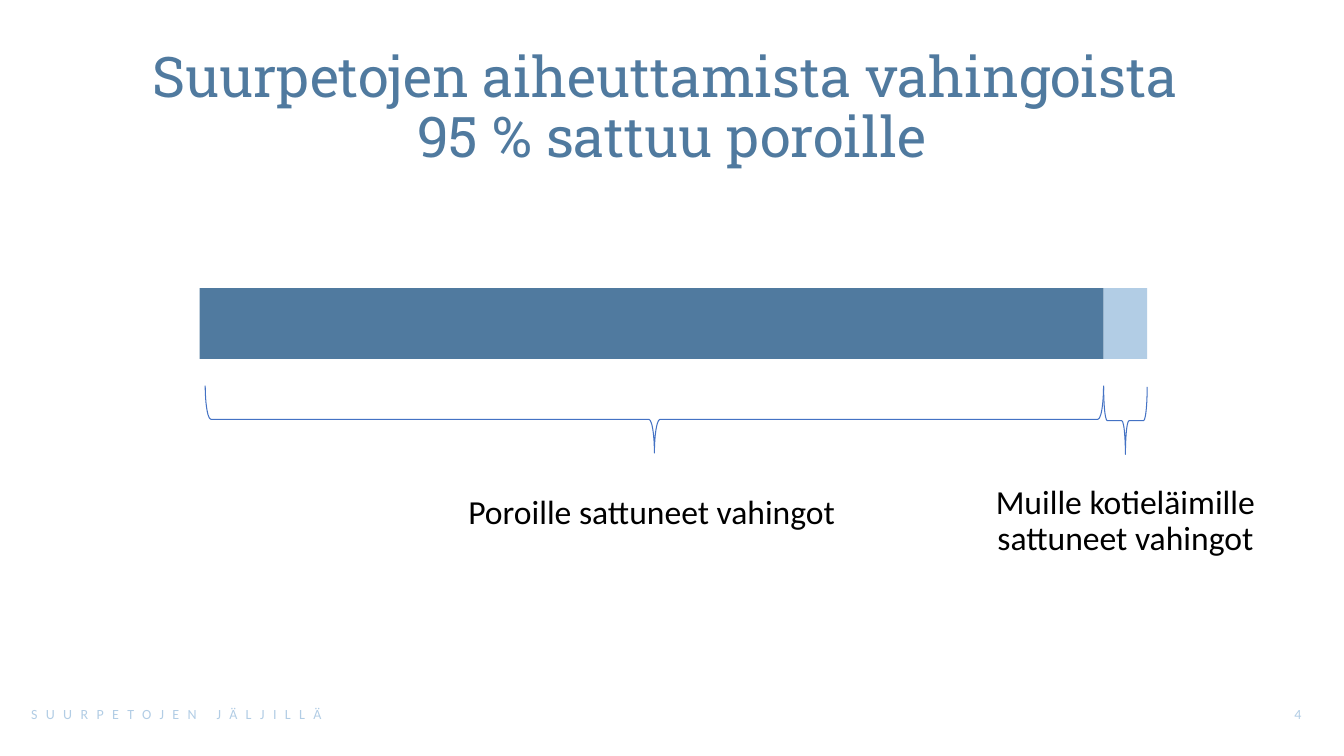
from pptx import Presentation
from pptx.util import Pt
from pptx.dml.color import RGBColor
from pptx.enum import shapes as sh, text as tx

HUES = {"dark": "507A9F", "pale": "B2CDE5", "brace": "4472C4", "ink": "000000"}
MID, LEFT, RIGHT = tx.PP_ALIGN.CENTER, tx.PP_ALIGN.LEFT, tx.PP_ALIGN.RIGHT


def hue(name):
    return RGBColor.from_string(HUES[name])


def place(item, box):
    item.left, item.top, item.width, item.height = map(Pt, box)


def write(frame, lines, size, color, align, font="Calibri"):
    frame.word_wrap = True
    frame.auto_size = tx.MSO_AUTO_SIZE.NONE
    para = frame.paragraphs[0]
    para.alignment = align
    for i, line in enumerate(lines):
        if i:
            para.add_line_break()
        run = para.add_run()
        run.text = line
        run.font.size, run.font.name = Pt(size), font
        run.font.bold = False
        run.font.color.rgb = hue(color)
    return para


def add_title(slide, box):
    title = slide.shapes.title
    place(title, box)
    frame = title.text_frame
    frame.vertical_anchor = tx.MSO_ANCHOR.MIDDLE
    lines = ["Suurpetojen aiheuttamista vahingoista ", "95 % sattuu poroille"]
    write(frame, lines, 40, "dark", MID, "Roboto Slab").line_spacing = 0.9


def add_label(slide, box, words):
    frame = slide.shapes.add_textbox(*map(Pt, box)).text_frame
    frame.vertical_anchor = tx.MSO_ANCHOR.MIDDLE
    frame.margin_left = frame.margin_right = Pt(9)
    para = write(frame, [words], 24, "ink", MID)
    para.line_spacing, para.space_before = 0.9, Pt(10)


def add_brace(slide, box):
    # The box is the visible one; the brace is turned to point down
    x, y, w, h = box
    turned = (x + (w - h) / 2, y + (h - w) / 2, h, w)
    brace = slide.shapes.add_shape(sh.MSO_SHAPE.RIGHT_BRACE, *map(Pt, turned))
    brace.rotation = 90
    brace.shadow.inherit = False
    brace.fill.background()
    brace.line.color.rgb = hue("brace")
    brace.line.width = Pt(0.75)


def add_bar(slide, box, share):
    x, y, w, h = box
    cut = w * share
    # Two parts of the bar
    for left, wide, color in ((x, cut, "dark"), (x + cut, w - cut, "pale")):
        part = slide.shapes.add_shape(
            sh.MSO_SHAPE.RECTANGLE, *map(Pt, (left, y, wide, h)))
        part.shadow.inherit = False
        part.fill.solid()
        part.fill.fore_color.rgb = hue(color)
        part.line.fill.background()
    # Braces below the parts
    add_brace(slide, (x + 4, y + 69.5, cut - 4, 48.2))
    add_brace(slide, (x + cut, y + 70.5, w - cut, 48.2))
    # Labels below the braces
    add_label(slide, (x + 177.8, y + 136.8, 290.2, 48.2),
              "Poroille sattuneet vahingot")
    add_label(slide, (x + 516.2, y + 117.4, 290.2, 98.6),
              "Muille kotieläimille sattuneet vahingot")


def add_foot(slide, box):
    x, y, w, h = box
    parts = (("SUURPETOJEN JÄLJILLÄ", x, 324, LEFT, 600),
             ("4", x + w - 216, 216, RIGHT, 0))
    for words, left, wide, align, gap in parts:
        note = slide.shapes.add_textbox(*map(Pt, (left, y, wide, h)))
        para = write(note.text_frame, [words], 10, "pale", align)
        if gap:  # letter spacing, in hundredths of a point
            para.runs[0].font._element.set("spc", str(gap))


def main():
    deck = Presentation()
    deck.slide_width, deck.slide_height = Pt(960), Pt(540)
    slide = deck.slides.add_slide(deck.slide_layouts[5])
    add_title(slide, (0, 28.8, 960, 98.6))
    add_bar(slide, (142.6, 205.9, 676.8, 50.4), 0.954)
    add_foot(slide, (15.1, 500.4, 921.6, 28.8))
    deck.save("out.pptx")


if __name__ == "__main__":
    main()
